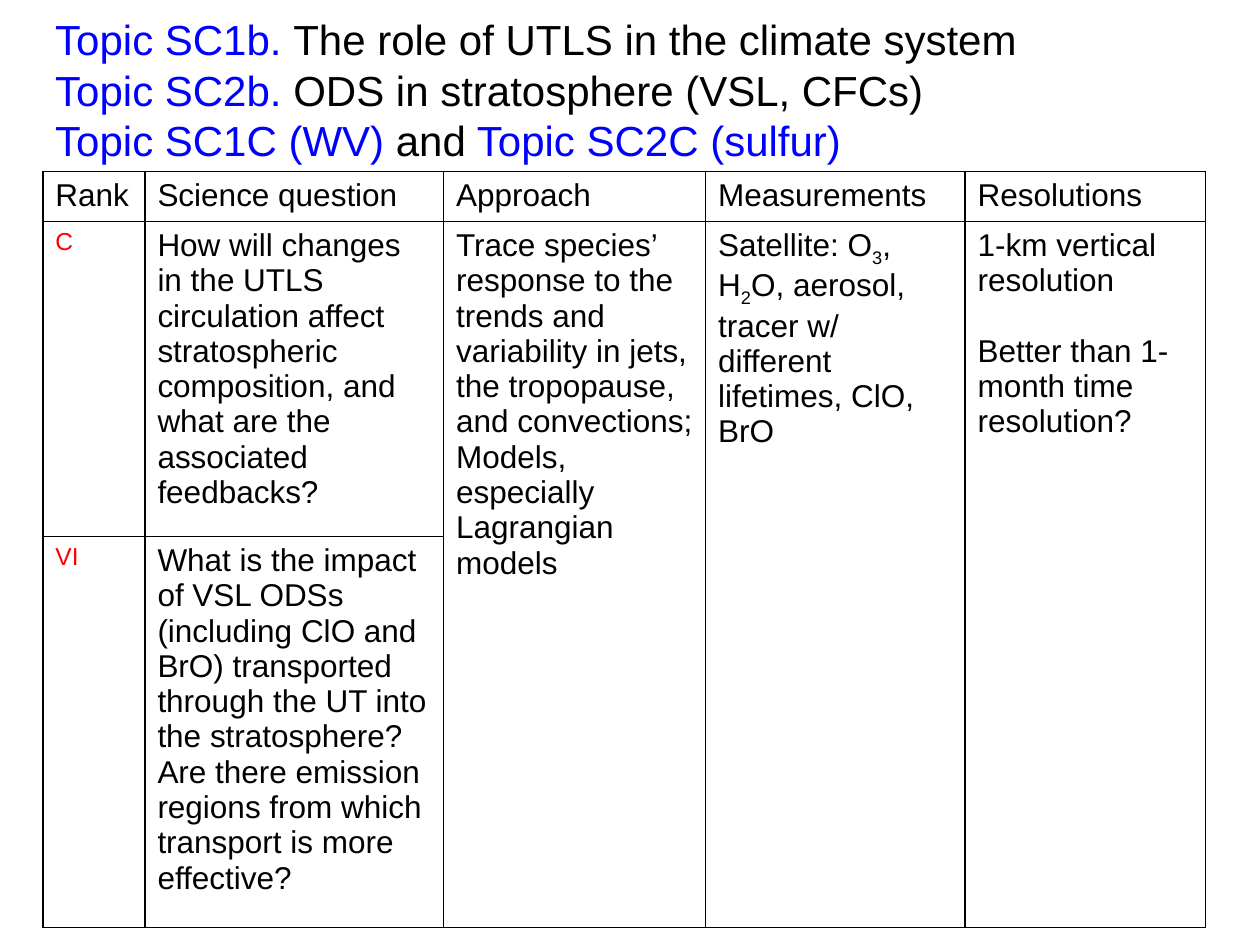
from lxml import etree
from pptx import Presentation
from pptx.dml.color import RGBColor
from pptx.enum.text import MSO_ANCHOR
from pptx.oxml.ns import qn
from pptx.util import Inches, Pt

BLACK, BLUE, RED, WHITE = "000000", "0000FF", "FF0000", "FFFFFF"
COLUMN_WIDTHS = [0.81, 2.37, 2.08, 2.06, 1.91]
ROW_HEIGHTS = [0.4, 2.5, 3.1]
HEADERS = ["Rank", "Science question", "Approach", "Measurements", "Resolutions"]


def color(hex_value):
    return RGBColor.from_string(hex_value)


def write(paragraph, text, size=18, fill=BLACK, subscript=False):
    """Add one formatted run to a paragraph."""
    run = paragraph.add_run()
    run.text = text
    run.font.name = "Arial"
    run.font.size = Pt(size)
    run.font.color.rgb = color(fill)
    if subscript:
        run.font._element.set("baseline", "-25000")


def border_cell(cell, width=1):
    properties = cell._tc.get_or_add_tcPr()
    for index, side in enumerate(["lnL", "lnR", "lnT", "lnB"]):
        line = etree.Element(qn(f"a:{side}"), w=str(Pt(width)))
        fill = etree.SubElement(line, qn("a:solidFill"))
        etree.SubElement(fill, qn("a:srgbClr"), val=BLACK)
        properties.insert(index, line)


def add_topics(slide, left, top, width, height):
    frame = slide.shapes.add_textbox(left, top, width, height).text_frame
    frame.word_wrap = True
    topics = [
        [("Topic SC1b. ", BLUE), ("The role of UTLS in the climate system", BLACK)],
        [("Topic SC2b.", BLUE), (" ODS in stratosphere (VSL, CFCs)", BLACK)],
        [("Topic SC1C (WV) ", BLUE), ("and", BLACK), (" Topic SC2C (sulfur)", BLUE)],
    ]
    for index, parts in enumerate(topics):
        paragraph = frame.add_paragraph() if index else frame.paragraphs[0]
        paragraph.line_spacing = Pt(28.8)
        for text, fill in parts:
            write(paragraph, text, size=24, fill=fill)


def add_question_table(slide, left, top, width, height):
    table = slide.shapes.add_table(
        len(ROW_HEIGHTS), len(COLUMN_WIDTHS), left, top, width, height).table
    table.first_row = table.horz_banding = False
    for column, column_width in zip(table.columns, COLUMN_WIDTHS):
        column.width = Inches(column_width)
    for row, row_height in zip(table.rows, ROW_HEIGHTS):
        row.height = Inches(row_height)
    for cell in table.iter_cells():
        cell.fill.solid()
        cell.fill.fore_color.rgb = color(WHITE)
        cell.vertical_anchor = MSO_ANCHOR.TOP
        border_cell(cell)

    # The last three columns are shared by both questions
    for column in range(2, 5):
        table.cell(1, column).merge(table.cell(2, column))

    # Header row
    for column, header in enumerate(HEADERS):
        write(table.cell(0, column).text_frame.paragraphs[0], header)

    # Ranked questions
    questions = [
        ("C", "How will changes in the UTLS circulation affect stratospheric "
              "composition, and what are the associated feedbacks?"),
        ("VI", "What is the impact of VSL ODSs (including ClO and BrO) transported "
               "through the UT into the stratosphere? Are there emission regions "
               "from which transport is more effective?"),
    ]
    for row, (rank, question) in enumerate(questions, start=1):
        write(table.cell(row, 0).text_frame.paragraphs[0], rank, size=14, fill=RED)
        write(table.cell(row, 1).text_frame.paragraphs[0], question)

    # Approach
    approach = table.cell(1, 2).text_frame
    write(approach.paragraphs[0], "Trace species’ response to the trends and "
          "variability in jets, the tropopause, and convections;")
    write(approach.add_paragraph(), "Models, especially Lagrangian models")

    # Measurements, with the digits of the formulas lowered
    measurements = table.cell(1, 3).text_frame.paragraphs[0]
    for text in ["Satellite: O", "3", ", H", "2",
                 "O, aerosol, tracer w/ different lifetimes, ClO, BrO"]:
        write(measurements, text, subscript=text.isdigit())

    # Resolutions
    resolutions = table.cell(1, 4).text_frame
    write(resolutions.paragraphs[0], "1-km vertical resolution")
    time_resolution = resolutions.add_paragraph()
    time_resolution.space_before = Pt(20)
    write(time_resolution, "Better than 1-month time resolution?")


def main():
    presentation = Presentation()
    presentation.slide_width, presentation.slide_height = Inches(10), Inches(7.5)
    slide = presentation.slides.add_slide(presentation.slide_layouts[6])
    add_question_table(slide, Inches(0.34), Inches(1.36),
                       Inches(sum(COLUMN_WIDTHS)), Inches(sum(ROW_HEIGHTS)))
    add_topics(slide, Inches(0.34), Inches(0.06), Inches(7.9), Inches(1.72))
    presentation.save("out.pptx")


if __name__ == "__main__":
    main()
